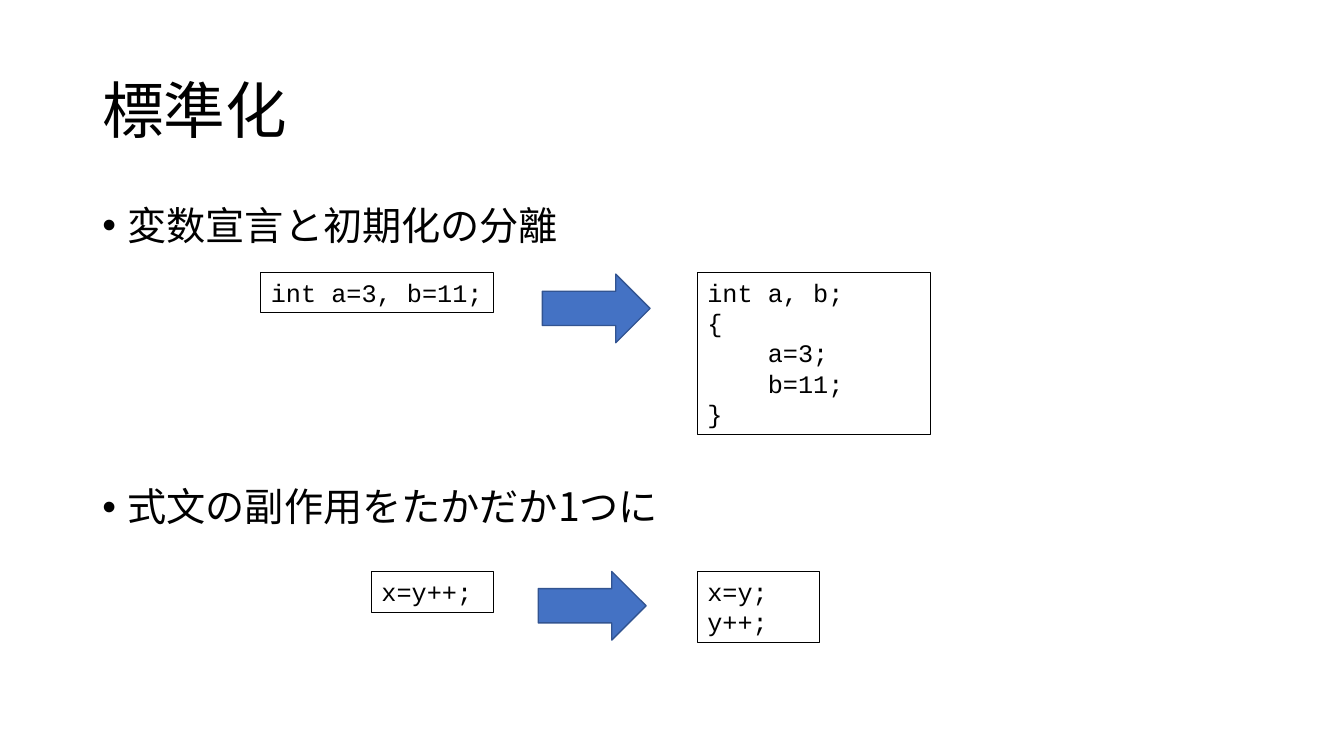
import pptx
import pptx.util
import pptx.dml.color
import pptx.enum.shapes
import pptx.enum.text
import pptx.oxml.ns
from lxml import etree

Pt = pptx.util.Pt
RGB = pptx.dml.color.RGBColor.from_string

TITLE = "標準化"
STEPS = [
    {
        "rule": "変数宣言と初期化の分離",
        "before": [(0, "int a=3, b=11;")],
        "after": [(0, "int a, b;"), (0, "{"), (4, "a=3;"), (4, "b=11;"), (0, "}")],
        "code_width": 166.4,
        "rule_top": 144,
        "code_top": 194.4,
        "arrow_at": (387.4, 195.8),
    },
    {
        "rule": "式文の副作用をたかだか1つに",
        "before": [(0, "x=y++;")],
        "after": [(0, "x=y;"), (0, "y++;")],
        "code_width": 87.4,
        "rule_top": 344.8,
        "code_top": 408.2,
        "arrow_at": (384.5, 408.2),
    },
]

THEME = {
    "text": "000000", "arrow": "4472C4", "arrow_line": "325491",
    "prose_font": "Noto Sans CJK JP", "code_font": "Courier New",
    "title_size": 44, "rule_size": 28, "code_size": 18,
}
LEFT, WIDTH = 66, 828
BEFORE_RIGHT, AFTER_LEFT = 352.8, 498.2
CODE_LINE, CODE_PADDING, CODE_CHAR = 21.8, 7.2, 10.8
ARROW_WIDTH, ARROW_HEIGHT = 77, 49
BULLET_INDENT = 18


def add_text(slide, lines, left, top, width, height, *, font, size,
             spacing=1.0, space_before=0, middle=False, bullet=False, border=False):
    box = slide.shapes.add_textbox(Pt(left), Pt(top), Pt(width), Pt(height))
    frame = box.text_frame
    frame.word_wrap = True
    if middle:
        frame.vertical_anchor = pptx.enum.text.MSO_ANCHOR.MIDDLE
    if border:
        box.line.color.rgb = RGB(THEME["text"])
        box.line.width = Pt(0.75)
    for number, (indent, words) in enumerate(lines):
        paragraph = frame.add_paragraph() if number else frame.paragraphs[0]
        paragraph.line_spacing = spacing
        paragraph.space_before = Pt(space_before)
        properties = paragraph._p.get_or_add_pPr()
        if indent:
            properties.set("marL", str(Pt(indent)))
        if bullet:
            properties.set("indent", str(-Pt(indent)))
            bullet_font = etree.SubElement(properties, pptx.oxml.ns.qn("a:buFont"))
            bullet_font.set("typeface", "Arial")
            mark = etree.SubElement(properties, pptx.oxml.ns.qn("a:buChar"))
            mark.set("char", "•")
        run = paragraph.add_run()
        run.text = words
        run.font.name = font
        run.font.size = Pt(size)
        run.font.color.rgb = RGB(THEME["text"])
        east_asian = etree.SubElement(run.font._element, pptx.oxml.ns.qn("a:ea"))
        east_asian.set("typeface", font)


def add_code(slide, code, left, top, width):
    lines = [(indent * CODE_CHAR, words) for indent, words in code]
    height = CODE_PADDING + CODE_LINE * len(code)
    add_text(slide, lines, left, top, width, height, font=THEME["code_font"],
             size=THEME["code_size"], border=True)


def add_arrow(slide, left, top):
    arrow = slide.shapes.add_shape(
        pptx.enum.shapes.MSO_SHAPE.RIGHT_ARROW,
        Pt(left), Pt(top), Pt(ARROW_WIDTH), Pt(ARROW_HEIGHT))
    arrow.shadow.inherit = False
    arrow.fill.solid()
    arrow.fill.fore_color.rgb = RGB(THEME["arrow"])
    arrow.line.color.rgb = RGB(THEME["arrow_line"])
    arrow.line.width = Pt(1)


def main():
    deck = pptx.Presentation()
    deck.slide_width, deck.slide_height = Pt(960), Pt(540)
    slide = deck.slides.add_slide(deck.slide_layouts[6])
    add_text(slide, [(0, TITLE)], LEFT, 28.8, WIDTH, 104.4, font=THEME["prose_font"],
             size=THEME["title_size"], spacing=0.9, middle=True)
    for step in STEPS:
        add_text(slide, [(BULLET_INDENT, step["rule"])], LEFT, step["rule_top"], WIDTH, 46,
                 font=THEME["prose_font"], size=THEME["rule_size"],
                 spacing=0.9, space_before=10, bullet=True)
        width, top = step["code_width"], step["code_top"]
        add_code(slide, step["before"], BEFORE_RIGHT - width, top, width)
        add_code(slide, step["after"], AFTER_LEFT, top, width)
        add_arrow(slide, *step["arrow_at"])
    deck.save("out.pptx")


if __name__ == "__main__":
    main()
